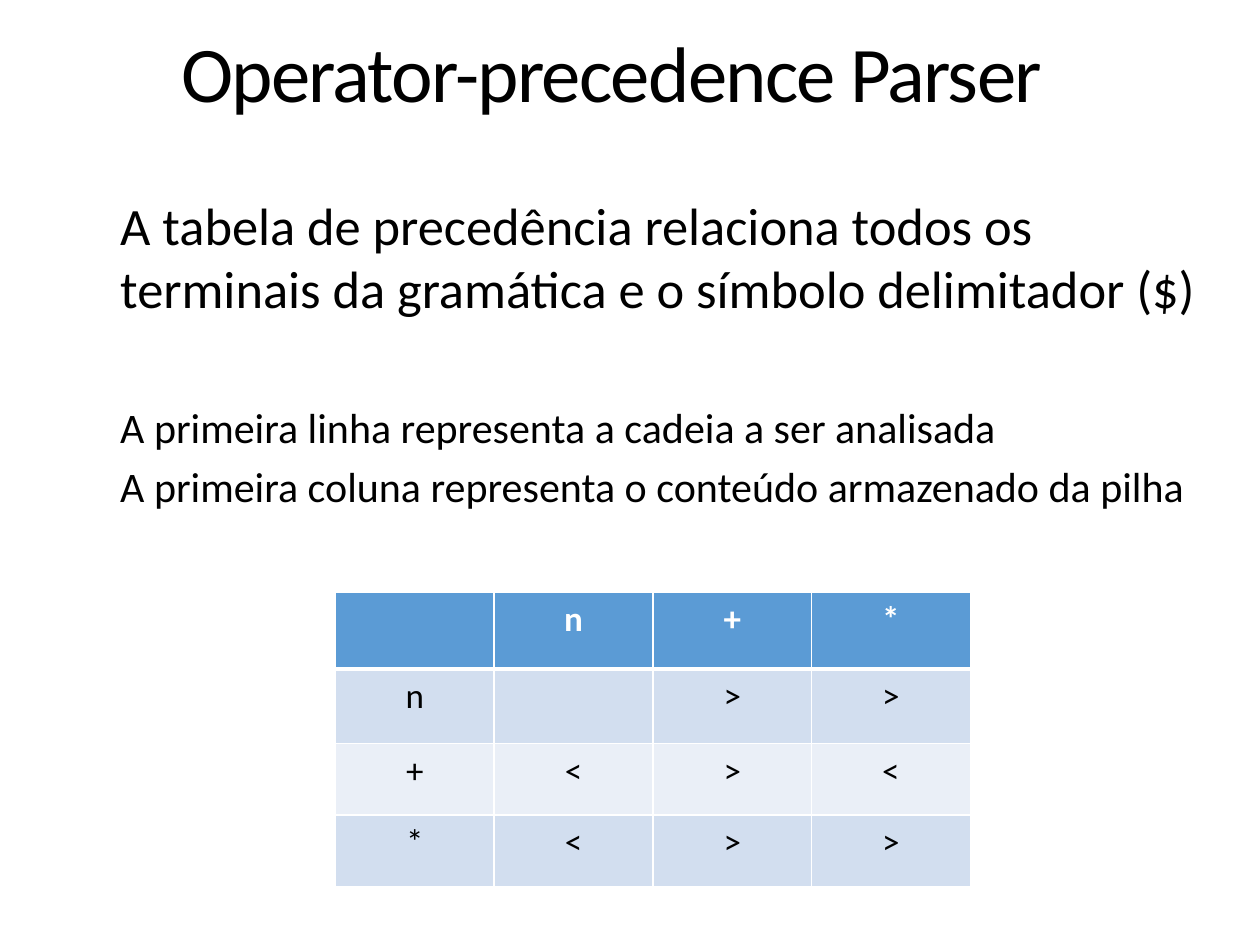
import pptx
import pptx.util
import pptx.dml.color
import pptx.enum.text
import pptx.oxml
import pptx.oxml.ns

Pt = pptx.util.Pt
RGB = pptx.dml.color.RGBColor
ALIGN = pptx.enum.text.PP_ALIGN
MIDDLE = pptx.enum.text.MSO_ANCHOR.MIDDLE

BLACK = RGB(0, 0, 0)
WHITE = RGB(255, 255, 255)
BLUE = RGB(0x5B, 0x9B, 0xD5)
DARK = RGB(0xD2, 0xDE, 0xEF)
LIGHT = RGB(0xEA, 0xEF, 0xF7)

TITLE = "Operator-precedence Parser "
BODY = [
    ("A tabela de precedência relaciona todos os terminais da gramática e o símbolo delimitador ($)", 30, 6),
    ("A primeira linha representa a cadeia a ser analisada", 24, 47),
    ("A primeira coluna representa o conteúdo armazenado da pilha", 24, 4.8),
]
GRID = [
    ["", "n", "+", "*"],
    ["n", "", ">", ">"],
    ["+", "<", ">", "<"],
    ["*", "<", ">", ">"],
]
ROWS = [43.9, 42.5, 41, 41]
WIDE = 90.7


def style(font, **look):
    look = {"name": "Calibri", "color": BLACK, **look}
    font.color.rgb = look.pop("color")
    for key, value in look.items():
        setattr(font, key, value)


def add_box(slide, *place):
    frame = slide.shapes.add_textbox(*map(Pt, place)).text_frame
    frame.word_wrap = True
    frame.vertical_anchor = MIDDLE
    return frame


def add_run(para, text, **look):
    run = para.add_run()
    run.text = text
    style(run.font, **look)
    return run


def add_edges(cell, head):
    props = cell._tc.get_or_add_tcPr()
    for spot, side in enumerate("LRTB"):
        width = Pt(3 if head and side == "B" else 1)
        props.insert(spot, pptx.oxml.parse_xml(
            f'<a:ln{side} {pptx.oxml.ns.nsdecls("a")} w="{width}"><a:solidFill>'
            f'<a:srgbClr val="{WHITE}"/></a:solidFill></a:ln{side}>'))


def add_grid(slide):
    table = slide.shapes.add_table(
        len(GRID), len(GRID[0]), Pt(191.7), Pt(338.4),
        Pt(WIDE * len(GRID[0])), Pt(sum(ROWS))).table
    for col in table.columns:
        col.width = Pt(WIDE)
    for r, words in enumerate(GRID):
        table.rows[r].height = Pt(ROWS[r])
        head = r == 0
        for c, word in enumerate(words):
            cell = table.cell(r, c)
            cell.fill.solid()
            cell.fill.fore_color.rgb = BLUE if head else (LIGHT, DARK)[r % 2]
            add_edges(cell, head)
            para = cell.text_frame.paragraphs[0]
            para.alignment = ALIGN.CENTER
            if word:
                add_run(para, word, size=Pt(20), bold=head,
                        color=WHITE if head else BLACK)


def main():
    deck = pptx.Presentation()
    deck.slide_width, deck.slide_height = Pt(720), Pt(540)
    slide = deck.slides.add_slide(deck.slide_layouts[6])

    body = add_box(slide, 34.6, 71.3, 661.7, 259.9)
    for i, (text, size, gap) in enumerate(BODY):
        para = body.add_paragraph() if i else body.paragraphs[0]
        para.space_before = Pt(gap)
        para._p.get_or_add_pPr().set("marL", str(Pt(27)))
        add_run(para, text, size=Pt(size))

    para = add_box(slide, 25.2, 9.4, 657.4, 62.6).paragraphs[0]
    para.alignment = ALIGN.CENTER
    run = add_run(para, TITLE, size=Pt(45))
    run._r.get_or_add_rPr().set("spc", "-100")

    add_grid(slide)
    deck.save("out.pptx")


if __name__ == "__main__":
    main()
